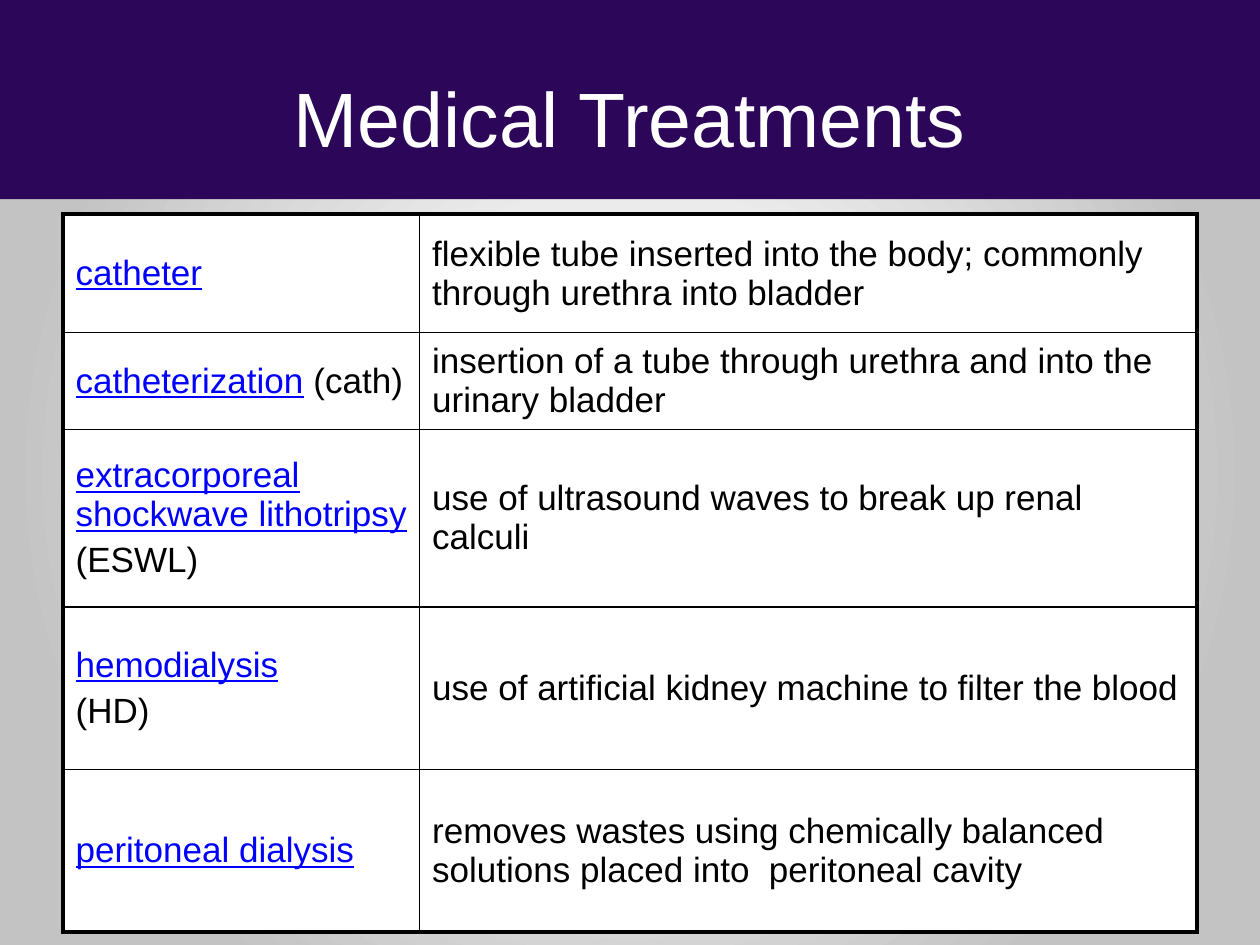
from lxml import etree
from pptx import Presentation
from pptx.dml.color import RGBColor
from pptx.enum.shapes import MSO_SHAPE
from pptx.enum.text import MSO_ANCHOR, PP_ALIGN
from pptx.oxml import parse_xml
from pptx.oxml.ns import nsdecls, qn
from pptx.util import Inches, Pt

RECT = MSO_SHAPE.RECTANGLE
MIDDLE = MSO_ANCHOR.MIDDLE
CENTER = PP_ALIGN.CENTER
FONT = "Arial"
HEX = {"band": "2C0659", "white": "FFFFFF", "black": "000000",
       "term": "0000FF", "mid": "EBEBEB", "edge": "C3C3C3"}
RGB = {name: RGBColor.from_string(code) for name, code in HEX.items()}
THICK, THIN = Pt(2.25), Pt(1)

# Each row: paragraphs of (term, plain text), then the meaning
ROWS = [
    ([("catheter", "")],
     "flexible tube inserted into the body; commonly through urethra into bladder"),
    ([("catheterization", " (cath)")],
     "insertion of a tube through urethra and into the urinary bladder"),
    ([("extracorporeal shockwave lithotripsy", ""), ("", "(ESWL)")],
     "use of ultrasound waves to break up renal calculi"),
    ([("hemodialysis", ""), ("", "(HD)")],
     "use of artificial kidney machine to filter the blood"),
    ([("peritoneal dialysis", "")],
     "removes wastes using chemically balanced solutions placed into  peritoneal cavity"),
]
WIDTHS = [2.83, 6.17]
HEIGHTS = [0.94, 0.72, 1.41, 1.29, 1.29]


def style(para, size, color):
    para.font.name = FONT
    para.font.size = Pt(size)
    para.font.color.rgb = RGB[color]


def border(cell, side, width):
    line = etree.SubElement(cell._tc.get_or_add_tcPr(), qn(f"a:ln{side}"), w=str(width))
    fill = etree.SubElement(line, qn("a:solidFill"))
    etree.SubElement(fill, qn("a:srgbClr"), val=HEX["black"])


deck = Presentation()
deck.slide_width, deck.slide_height = Inches(10), Inches(7.5)
slide = deck.slides.add_slide(deck.slide_layouts[6])

# Round gradient behind everything
back = slide.background.fill
back.gradient()
stops = "".join(f'<a:gs pos="{share * 1000}"><a:srgbClr val="{HEX[name]}"/></a:gs>'
                for share, name in [(2, "white"), (35, "mid"), (79, "edge")])
grad = slide.background._cSld.find(".//" + qn("a:gradFill"))
grad.getparent().replace(grad, parse_xml(
    f'<a:gradFill {nsdecls("a")} rotWithShape="1"><a:gsLst>{stops}</a:gsLst>'
    '<a:path path="circle"><a:fillToRect l="50000" t="50000" r="50000" b="50000"/>'
    '</a:path></a:gradFill>'))

# Title on its band
band = slide.shapes.add_shape(RECT, 0, 0, deck.slide_width, Inches(1.58))
band.shadow.inherit = False
band.fill.solid()
band.fill.fore_color.rgb = RGB["band"]
band.line.fill.background()

title = slide.shapes.add_textbox(Inches(0.5), Inches(0.3), Inches(9), Inches(1.25))
frame = title.text_frame
frame.word_wrap = True
frame.vertical_anchor = MIDDLE
head = frame.paragraphs[0]
head.text = "Medical Treatments"
head.alignment = CENTER
style(head, 44, "white")

# Table of terms and meanings
table = slide.shapes.add_table(len(ROWS), len(WIDTHS), Inches(0.5), Inches(1.7),
                               Inches(sum(WIDTHS)), Inches(sum(HEIGHTS))).table
table.first_row = table.horz_banding = False
for col, width in zip(table.columns, WIDTHS):
    col.width = Inches(width)

last = len(ROWS) - 1
for r, (terms, meaning) in enumerate(ROWS):
    table.rows[r].height = Inches(HEIGHTS[r])
    for c, paras in enumerate([terms, [("", meaning)]]):
        cell = table.cell(r, c)
        cell.vertical_anchor = MIDDLE
        outer = {"L": c == 0, "R": c == 1, "T": r == 0, "B": r == last}
        for side, thick in outer.items():
            border(cell, side, THICK if thick else THIN)
        cell.fill.solid()
        cell.fill.fore_color.rgb = RGB["white"]
        for i, (term, plain) in enumerate(paras):
            text = cell.text_frame
            para = text.add_paragraph() if i else text.paragraphs[0]
            para.space_before = Pt(4)
            style(para, 20, "black")
            if term:
                run = para.add_run()
                run.text = term
                run.font.underline = True
                run.font.color.rgb = RGB["term"]
            if plain:
                para.add_run().text = plain

deck.save("out.pptx")
